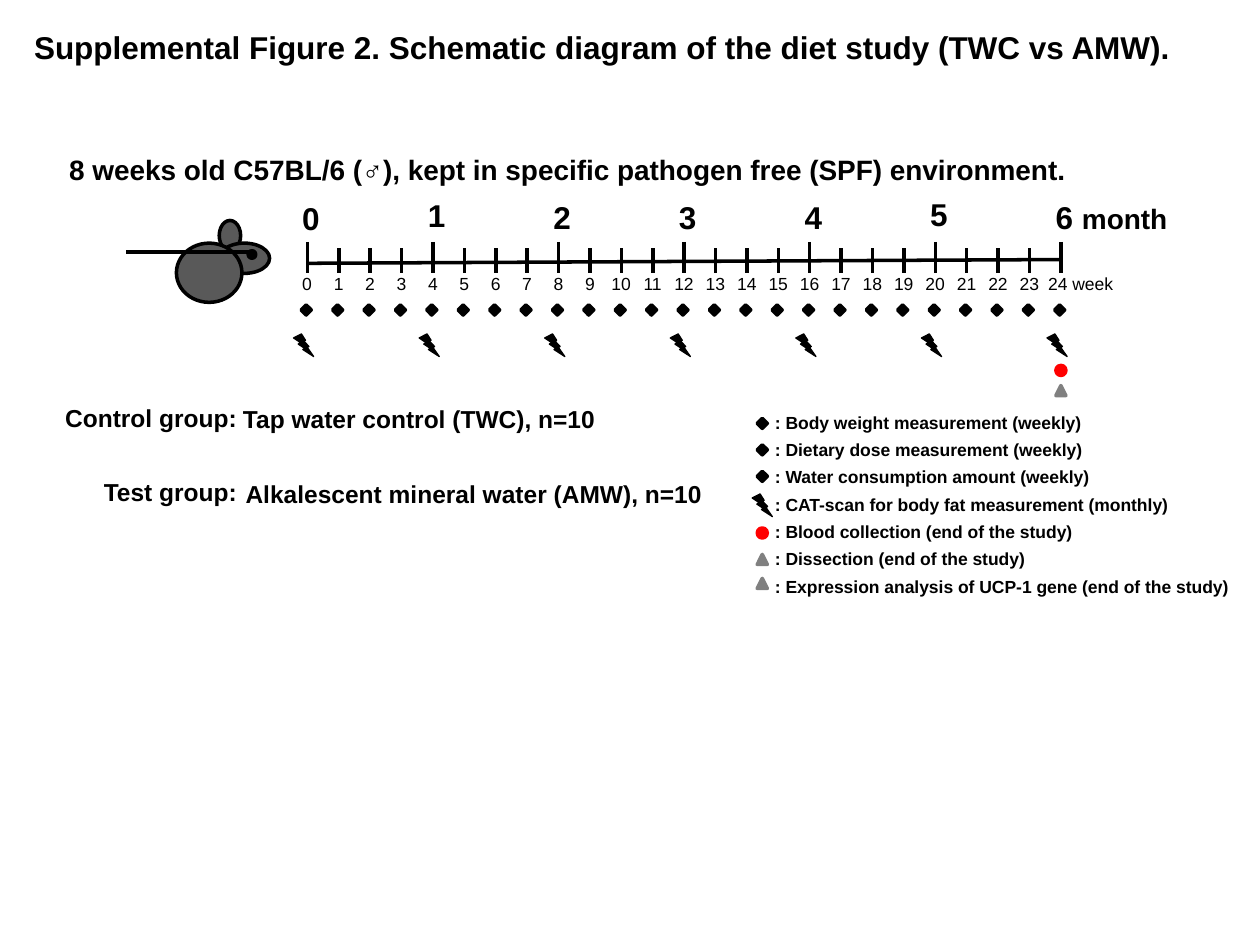
import pptx
import pptx.dml.color
import pptx.enum.shapes
import pptx.enum.text
import pptx.oxml
import pptx.oxml.ns
import pptx.util

Inches = pptx.util.Inches
Pt = pptx.util.Pt
KIND = pptx.enum.shapes.MSO_SHAPE
ALIGN = pptx.enum.text.PP_ALIGN

BLACK, GREY, RED, FUR = "000000", "808080", "FF0000", "595959"
FONT = "Arial"

# Timeline grid: one column a week, four weeks a month
START, WEEKS, WEEKS_PER_MONTH = 2.44, 24, 4
COLUMN = 5.98 / WEEKS
SPINE_LEFT, SPINE_RIGHT = 2.09, 2.06
TICK_BOTTOM = 2.17
SYMBOL_ROW, SCAN_ROW, BLOOD_ROW, DISSECTION_ROW = 2.46, 2.74, 2.94, 3.1

# Symbol: preset shape, width, height, colour, line width
SYMBOLS = {
    "measure": (KIND.DIAMOND, 0.08, 0.08, BLACK, 2),
    "scan": (KIND.LIGHTNING_BOLT, 0.16, 0.18, BLACK, 0.75),
    "blood": (KIND.FLOWCHART_CONNECTOR, 0.08, 0.08, RED, 2),
    "dissection": (KIND.ISOSCELES_TRIANGLE, 0.08, 0.08, GREY, 2),
}

# Legend: symbol, centre of the symbol from the top, wording
LEGEND = [
    ("measure", 3.36, ": Body weight measurement (weekly)"),
    ("measure", 3.57, ": Dietary dose measurement (weekly)"),
    ("measure", 3.78, ": Water consumption amount (weekly)"),
    ("scan", 4.01, ": CAT-scan for body fat measurement (monthly)"),
    ("blood", 4.23, ": Blood collection (end of the study)"),
    ("dissection", 4.44, ": Dissection (end of the study)"),
    ("dissection", 4.63, ": Expression analysis of UCP-1 gene (end of the study)"),
]


def colour(code):
    return pptx.dml.color.RGBColor.from_string(code)


def week_x(week):
    return START + week * COLUMN


def place(box, left, top, width, height):
    box.left, box.top = Inches(left), Inches(top)
    box.width, box.height = Inches(width), Inches(height)


def write(box, *lines, size=14, bold=True, align=ALIGN.LEFT, spacing=1.0, after=0):
    """Fill a box; each line is a string or a list of (text, size) spans."""
    frame = box.text_frame
    frame.word_wrap = True
    frame.auto_size = pptx.enum.text.MSO_AUTO_SIZE.NONE
    frame.vertical_anchor = pptx.enum.text.MSO_ANCHOR.TOP
    for number, line in enumerate(lines):
        para = frame.add_paragraph() if number else frame.paragraphs[0]
        para.alignment, para.line_spacing = align, spacing
        para.space_before, para.space_after = Pt(0), Pt(after)
        for text, span_size in [(line, size)] if isinstance(line, str) else line:
            span = para.add_run()
            span.text = text
            span.font.name, span.font.size, span.font.bold = FONT, Pt(span_size), bold
            span.font.color.rgb = colour(BLACK)


def add_text(page, left, top, width, height, *lines, **style):
    box = page.shapes.add_textbox(0, 0, 0, 0)
    place(box, left, top, width, height)
    write(box, *lines, **style)
    return box


def add_line(page, x1, y1, x2, y2):
    line = page.shapes.add_connector(
        pptx.enum.shapes.MSO_CONNECTOR.STRAIGHT,
        Inches(x1), Inches(y1), Inches(x2), Inches(y2))
    line.line.color.rgb, line.line.width = colour(BLACK), Pt(2)
    pptx.oxml.ns.qn("a:effectLst")
    line._element.spPr.append(pptx.oxml.parse_xml(
        f'<a:effectLst {pptx.oxml.ns.nsdecls("a")}/>'))


def add_shape(shapes, kind, left, top, width, height, fill, line, weight):
    shape = shapes.add_shape(kind, Inches(left), Inches(top), Inches(width), Inches(height))
    shape.shadow.inherit = False
    shape.fill.solid()
    shape.fill.fore_color.rgb = colour(fill)
    shape.line.color.rgb, shape.line.width = colour(line), Pt(weight)


def add_symbol(page, name, x, y):
    """Centre a study symbol on a point."""
    kind, width, height, tint, weight = SYMBOLS[name]
    add_shape(page.shapes, kind, x - width / 2, y - height / 2,
              width, height, tint, tint, weight)


def curve_points(start, curves, steps=8):
    """Points along a chain of cubic curves, each given as three points."""
    points = [start]
    for first, second, end in curves:
        start = points[-1]
        for step in range(1, steps + 1):
            t = step / steps
            weights = ((1 - t) ** 3, 3 * t * (1 - t) ** 2, 3 * t * t * (1 - t), t ** 3)
            corners = (start, first, second, end)
            points.append(tuple(sum(w * c[axis] for w, c in zip(weights, corners))
                                for axis in (0, 1)))
    return points


def add_mouse(page):
    mouse = page.shapes.add_group_shape().shapes
    ear, head = (1.74, 1.75, 0.17, 0.24), (1.74, 1.93, 0.4, 0.24)
    body, eye = (1.4, 1.93, 0.52, 0.47), (1.97, 1.99, 0.06, 0.06)
    for part, fill in ((ear, FUR), (head, FUR), (body, FUR), (eye, BLACK)):
        add_shape(mouse, KIND.OVAL, *part, fill, BLACK, 2)
    points = curve_points((1.67, 2.32), [
        ((1.67, 2.35), (1.67, 2.38), (1.65, 2.39)),
        ((1.64, 2.41), (1.63, 2.41), (1.59, 2.42)),
        ((1.55, 2.43), (1.47, 2.44), (1.42, 2.44)),
        ((1.37, 2.44), (1.31, 2.43), (1.28, 2.41)),
        ((1.26, 2.39), (1.25, 2.36), (1.25, 2.34)),
        ((1.25, 2.32), (1.25, 2.31), (1.27, 2.3)),
        ((1.29, 2.29), (1.35, 2.28), (1.36, 2.28)),
    ])
    outline = mouse.build_freeform(*points[0], scale=Inches(1))
    outline.add_line_segments(points[1:], close=False)
    tail = outline.convert_to_shape()
    tail.shadow.inherit = False
    tail.fill.background()
    tail.line.color.rgb, tail.line.width = colour(BLACK), Pt(2.25)


def add_week_numbers(page):
    """Write all week numbers in one line, each centred on its tick."""
    left, inset = 2.3, 0.1
    numbers = "\t".join(str(week) for week in range(WEEKS + 1))
    box = add_text(page, left, 2.12, 6.95, 0.27, numbers + " week", size=10, bold=False)
    stops = [(week_x(week), "ctr") for week in range(1, WEEKS)]
    stops.append((week_x(WEEKS) - 0.1, "l"))
    tabs = "".join(f'<a:tab pos="{Inches(x - left - inset)}" algn="{side}"/>'
                   for x, side in stops)
    box.text_frame.paragraphs[0]._p.get_or_add_pPr().append(pptx.oxml.parse_xml(
        f'<a:tabLst {pptx.oxml.ns.nsdecls("a")}>{tabs}</a:tabLst>'))


def add_timeline(page):
    add_line(page, week_x(0), SPINE_LEFT, week_x(WEEKS), SPINE_RIGHT)
    for week in range(WEEKS + 1):
        x = week_x(week)
        monthly = week % WEEKS_PER_MONTH == 0
        add_line(page, x, 1.92 if monthly else 1.97, x, TICK_BOTTOM)
        add_symbol(page, "measure", x - 0.01, SYMBOL_ROW)
        if monthly:
            add_symbol(page, "scan", x - 0.03, SCAN_ROW)
    add_symbol(page, "blood", week_x(WEEKS), BLOOD_ROW)
    add_symbol(page, "dissection", week_x(WEEKS), DISSECTION_ROW)
    for month, top in enumerate((1.53, 1.51, 1.52, 1.52, 1.52, 1.5)):
        add_text(page, week_x(month * WEEKS_PER_MONTH) - 0.14, top, 0.35, 0.4,
                 str(month), size=18)
    add_text(page, week_x(WEEKS) - 0.14, 1.52, 1.22, 0.4, [("6 ", 18), ("month", 16)])
    add_week_numbers(page)


def add_legend(page, body):
    place(body, 6.05, 3.25, 3.87, 1.55)
    write(body, *(text for _, _, text in LEGEND), size=10, spacing=0.8, after=6)
    for para in body.text_frame.paragraphs:
        settings = para._p.get_or_add_pPr()
        settings.set("marL", "0")
        settings.set("indent", "0")
        settings.append(pptx.oxml.parse_xml(f'<a:buNone {pptx.oxml.ns.nsdecls("a")}/>'))
    for name, y, _ in LEGEND:
        add_symbol(page, name, 6.05, y)


def main():
    deck = pptx.Presentation()
    deck.slide_width, deck.slide_height = Inches(10), Inches(7.5)
    page = deck.slides.add_slide(deck.slide_layouts[1])
    title, body = page.placeholders
    place(title, 0.17, 0.17, 9.67, 0.4)
    write(title, "Supplemental Figure 2. Schematic diagram of the diet study (TWC vs AMW).",
          size=18)
    add_text(page, 0.45, 1.16, 8.38, 0.37,
             "8 weeks old C57BL/6 (♂), kept in specific pathogen free (SPF) environment.",
             size=16)
    for top, group, left, water in (
            (3.15, "Control group:", 1.83, "Tap water control (TWC), n=10"),
            (3.74, "Test group:", 1.85, "Alkalescent mineral water (AMW), n=10")):
        add_text(page, 0.34, top, 1.64, 0.34, group, align=ALIGN.RIGHT)
        add_text(page, left, top + 0.01, 3.98, 0.34, water)
    add_mouse(page)
    add_timeline(page)
    add_legend(page, body)
    deck.save("out.pptx")


if __name__ == "__main__":
    main()
